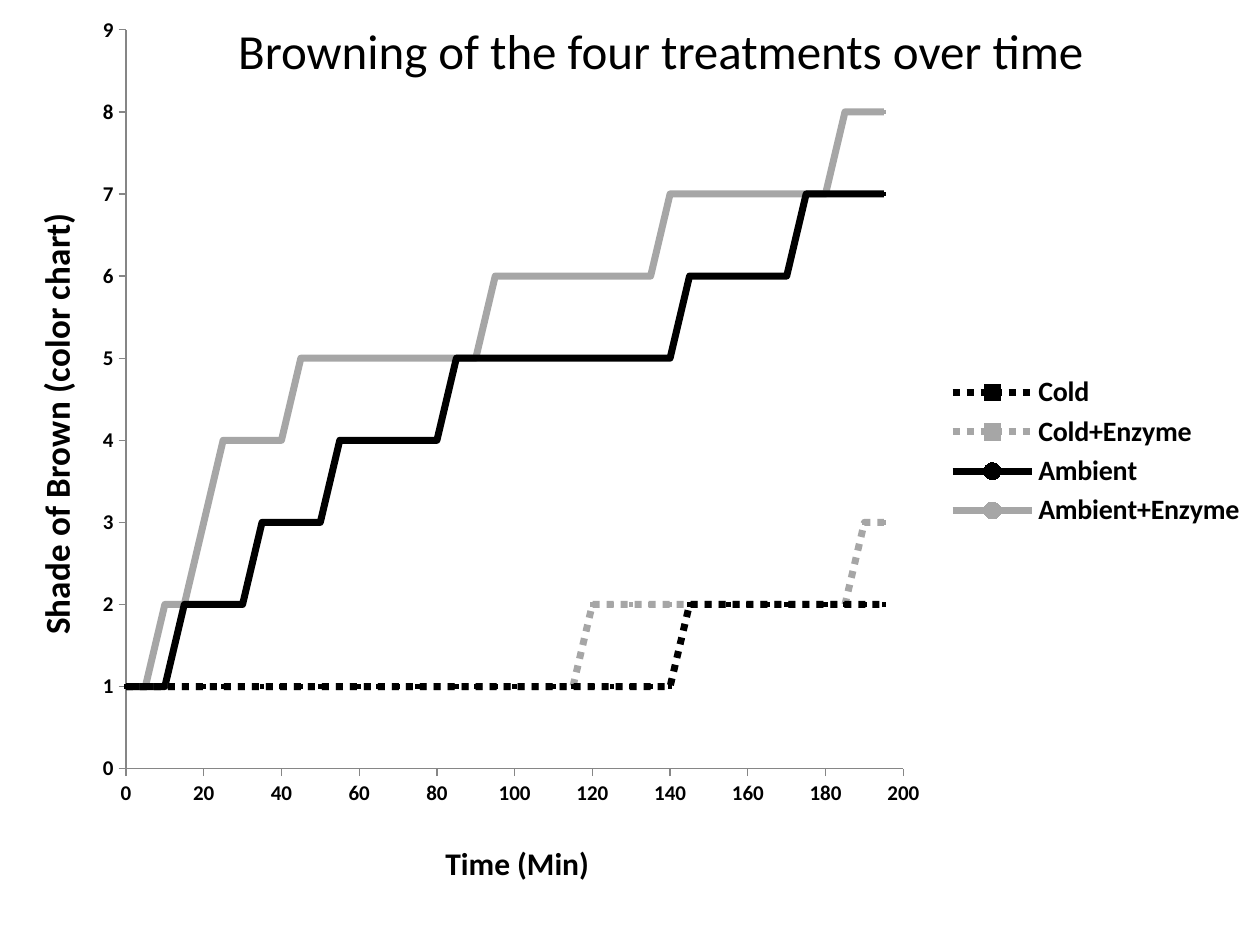
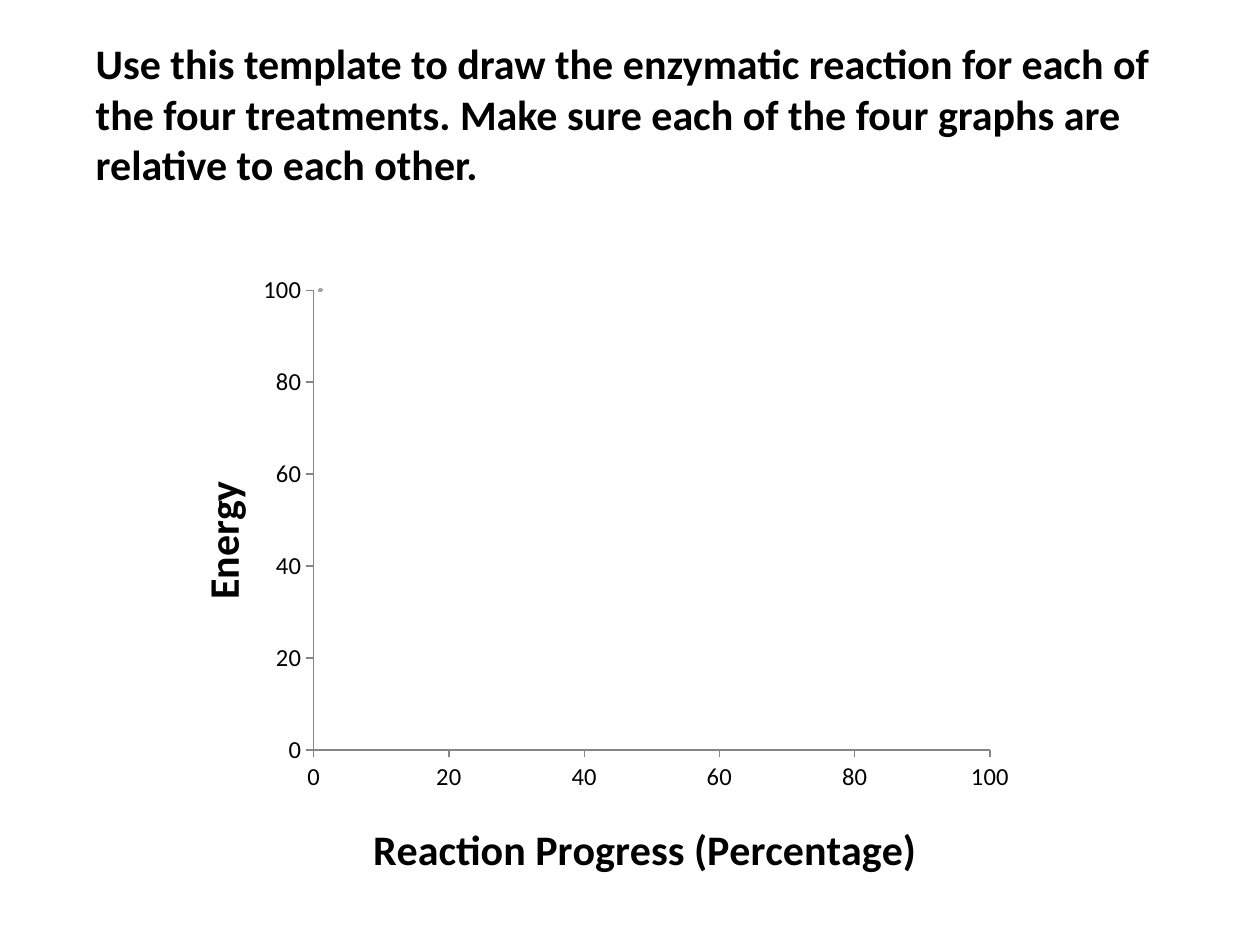
from lxml.etree import SubElement
from pptx import Presentation
from pptx.chart.data import XyChartData
from pptx.dml.color import RGBColor
from pptx.enum.chart import XL_CHART_TYPE as ChartType
from pptx.enum.chart import XL_LEGEND_POSITION as LegendPosition
from pptx.enum.chart import XL_MARKER_STYLE as Marker
from pptx.enum.chart import XL_TICK_MARK as TickMark
from pptx.enum.dml import MSO_LINE as Dash
from pptx.enum.text import MSO_ANCHOR as Anchor
from pptx.enum.text import MSO_AUTO_SIZE as AutoSize
from pptx.enum.text import PP_ALIGN as Align
from pptx.oxml.ns import qn
from pptx.util import Inches, Pt

COLORS = {"black": "000000", "gray": "A6A6A6", "dark_gray": "808080", "axis": "868686"}
FONT = "Calibri"
TITLE_ONLY = 5


def color(name):
    return RGBColor.from_string(COLORS[name])


def format_font(font, size, bold=False):
    font.name = FONT
    font.size = Pt(size)
    font.bold = bold
    font.color.rgb = color("black")


def write_text(text_frame, text, size=18, bold=False, align=None):
    paragraph = text_frame.paragraphs[0]
    paragraph.alignment = align
    run = paragraph.add_run()
    run.text = text
    format_font(run.font, size, bold)


def set_layout(parent, inner=False, **fractions):
    for old_layout in parent.findall(qn("c:layout")):
        parent.remove(old_layout)
    layout = SubElement(parent, qn("c:layout"))
    manual = SubElement(layout, qn("c:manualLayout"))
    if inner:
        SubElement(manual, qn("c:layoutTarget")).set("val", "inner")
    for key in ("x", "y"):
        SubElement(manual, qn(f"c:{key}Mode")).set("val", "edge")
    for key, value in fractions.items():
        SubElement(manual, qn(f"c:{key}")).set("val", str(value))
    overlay = parent.find(qn("c:overlay"))
    if overlay is None:
        parent.insert(0, layout)
    else:
        overlay.addprevious(layout)


class Deck:
    def __init__(self):
        self.presentation = Presentation()
        self.presentation.slide_width = Inches(10)
        self.presentation.slide_height = Inches(7.5)
        self.slide = None

    def add_slide(self):
        layout = self.presentation.slide_layouts[TITLE_ONLY]
        self.slide = self.presentation.slides.add_slide(layout)

    def title(self, text, left, top, width, height, wrap=True, **text_format):
        shape = self.slide.shapes.title
        shape.left, shape.top = Inches(left), Inches(top)
        shape.width, shape.height = Inches(width), Inches(height)
        frame = shape.text_frame
        frame.word_wrap = wrap
        frame.auto_size = AutoSize.SHAPE_TO_FIT_TEXT
        frame.vertical_anchor = Anchor.TOP
        write_text(frame, text, align=Align.LEFT, **text_format)
        shape.element.getparent().append(shape.element)

    def scatter(self, points_by_name, left, top, width, height, plot_area):
        data = XyChartData()
        for name, points in points_by_name.items():
            series = data.add_series(name)
            for x, y in points:
                series.add_data_point(x, y)
        frame = self.slide.shapes.add_chart(
            ChartType.XY_SCATTER_LINES,
            Inches(left), Inches(top), Inches(width), Inches(height), data)
        chart = frame.chart
        chart.has_title = False
        chart.has_legend = False
        format_font(chart.font, 10)
        chart.plots[0].vary_by_categories = False
        x, y, w, h = plot_area
        set_layout(chart.element.find(f".//{qn('c:plotArea')}"), inner=True, x=x, y=y, w=w, h=h)
        return chart

    def axis(self, axis, title, title_size, title_at, maximum, major, size, bold=False):
        axis.minimum_scale = 0
        axis.maximum_scale = maximum
        axis.major_unit = major
        axis.has_major_gridlines = False
        axis.major_tick_mark = TickMark.OUTSIDE
        axis.minor_tick_mark = TickMark.NONE
        axis.format.line.color.rgb = color("axis")
        axis.format.line.width = Pt(0.75)
        axis.tick_labels.number_format = "General"
        axis.tick_labels.number_format_is_linked = False
        format_font(axis.tick_labels.font, size, bold)
        write_text(axis.axis_title.text_frame, title, size=title_size, bold=True)
        x, y = title_at
        set_layout(axis.axis_title.element, x=x, y=y)

    def series(self, series, line_color, marker_style, width, dash=None, marker_fill=None):
        series.smooth = False
        line = series.format.line
        line.color.rgb = color(line_color)
        line.width = Pt(width)
        if dash:
            line.dash_style = dash
        marker = series.marker
        marker.style = marker_style
        marker.size = 2
        marker.format.line.color.rgb = color(line_color)
        if marker_fill:
            marker.format.fill.solid()
            marker.format.fill.fore_color.rgb = color(marker_fill)
        else:
            marker.format.fill.background()

    def legend(self, chart, size, **area):
        chart.has_legend = True
        chart.legend.position = LegendPosition.RIGHT
        chart.legend.include_in_layout = False
        format_font(chart.legend.font, size, bold=True)
        set_layout(chart.element.find(f".//{qn('c:legend')}"), **area)


def build_browning_slide(deck):
    treatment_rises = {
        "Cold": [145],
        "Cold+Enzyme": [120, 190],
        "Ambient": [15, 35, 55, 85, 145, 175],
        "Ambient+Enzyme": [10, 20, 25, 45, 95, 140, 185],
    }
    minutes = range(0, 200, 5)
    points = {
        name: [(minute, 1 + sum(minute >= rise for rise in rises)) for minute in minutes]
        for name, rises in treatment_rises.items()
    }
    deck.add_slide()
    chart = deck.scatter(points, 0, 0, 10, 7.17, plot_area=(0.1, 0.033, 0.617, 0.818))
    deck.axis(chart.category_axis, "Time (Min)", 18, (0.349, 0.925), 200, 20, 12, bold=True)
    deck.axis(chart.value_axis, "Shade of Brown (color chart) ", 20, (0.02, 0.22), 9, 1, 12,
              bold=True)
    for series in chart.plots[0].series:
        cold = series.name.startswith("Cold")
        enzyme = series.name.endswith("Enzyme")
        deck.series(series, "gray" if enzyme else "black",
                    Marker.SQUARE if cold else Marker.CIRCLE, 4,
                    dash=Dash.ROUND_DOT if cold else None,
                    marker_fill="dark_gray" if enzyme else "black")
    deck.legend(chart, 16, x=0.75, y=0.41, w=0.24, h=0.18)
    deck.title("Browning of the four treatments over time", 1.79, 0.11, 6.99, 0.57,
               wrap=False, size=28)


def build_template_slide(deck):
    deck.add_slide()
    chart = deck.scatter({"Series 1": [(1, 100)]}, 1.17, 2.08, 6.98, 4.98,
                         plot_area=(0.189, 0.045, 0.769, 0.734))
    deck.axis(chart.category_axis, "Reaction Progress (Percentage)", 24, (0.248, 0.88),
              100, 20, 14)
    deck.axis(chart.value_axis, "Energy", 24, (0.045, 0.338), 100, 20, 14)
    deck.series(chart.plots[0].series[0], "gray", Marker.CIRCLE, 2.25)
    deck.title(
        "Use this template to draw the enzymatic reaction for each of the four treatments. "
        "Make sure each of the four graphs are relative to each other.",
        0.66, 0.25, 8.87, 1.31, size=24, bold=True)


def main():
    deck = Deck()
    build_browning_slide(deck)
    build_template_slide(deck)
    deck.presentation.save("out.pptx")


if __name__ == "__main__":
    main()
